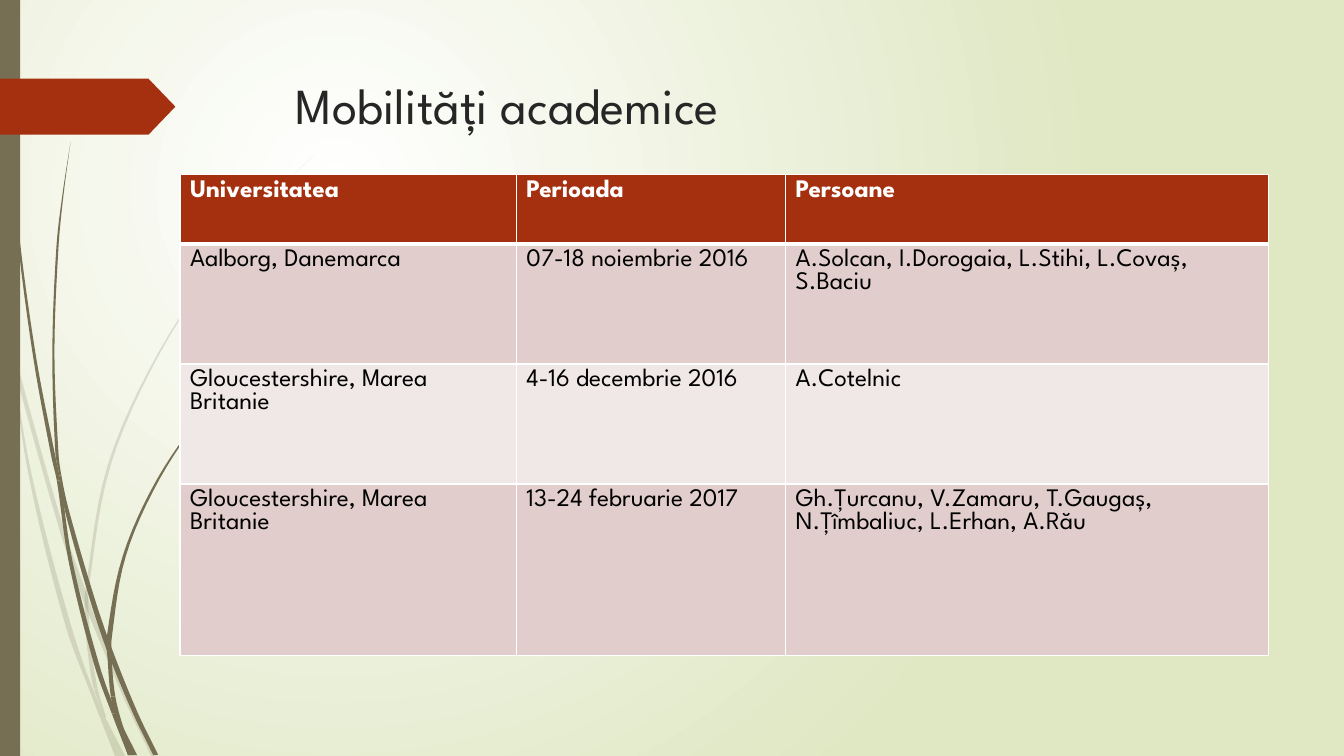
from lxml import etree
from pptx import Presentation
from pptx.dml.color import RGBColor
from pptx.enum.shapes import MSO_SHAPE
from pptx.enum.text import MSO_ANCHOR
from pptx.oxml.ns import qn
from pptx.util import Pt

RECTANGLE = MSO_SHAPE.RECTANGLE
ARROW = MSO_SHAPE.PENTAGON
TOP = MSO_ANCHOR.TOP

WHITE = RGBColor(0xFF, 0xFF, 0xFF)
BLACK = RGBColor(0x00, 0x00, 0x00)
CHARCOAL = RGBColor(0x26, 0x26, 0x26)
LIME = RGBColor(0xDF, 0xE7, 0xC3)
OLIVE = RGBColor(0x76, 0x6F, 0x54)
RUST = RGBColor(0xA5, 0x30, 0x10)
ROSE = RGBColor(0xE1, 0xCD, 0xCC)
BLUSH = RGBColor(0xF0, 0xE8, 0xE7)
FONT = "League Spartan"

TITLE = "Mobilități academice"
ROWS = [
    ("Universitatea", "Perioada", "Persoane"),
    ("Aalborg, Danemarca", "07-18 noiembrie 2016",
     "A.Solcan, I.Dorogaia, L.Stihi, L.Covaș, S.Baciu"),
    ("Gloucestershire, Marea Britanie", "4-16 decembrie 2016", "A.Cotelnic"),
    ("Gloucestershire, Marea Britanie", "13-24 februarie 2017",
     "Gh.Țurcanu, V.Zamaru, T.Gaugaș, N.Țîmbaliuc, L.Erhan, A.Rău"),
]
COLUMN_WIDTHS = [240.25, 192.25, 345]
ROW_HEIGHTS = [49.5, 85.75, 85.75, 122.5]

# Each blade has its joint heights, then stations of (y, left edge, right edge).
PALE_BLADES = [
    ((252, 421.9),
     [(203, 0, 0), (215.3, 0, 2.9), (252, 7.9, 11.2), (270.7, 12.2, 15.3),
      (374.4, 41.3, 44.6), (421.9, 56.9, 61.2), (439, 63.4, 67), (499, 88.6, 91.8),
      (540, 108, 111.6)]),
    ((499,),
     [(252, 7.9, 7.9), (338.4, 20.2, 22.5), (446.4, 46.6, 50.6),
      (499, 66.2, 69.1), (540, 82.1, 89.3)]),
    ((420.5, 439.2, 491.8),
     [(110.2, 224.6, 224.6), (141.8, 193, 193.6), (175.7, 164.2, 164.9),
      (250.6, 113.8, 115.2), (332, 77, 79.2), (420.5, 61.2, 63.4),
      (439.2, 60.5, 63.4), (465.1, 62.6, 65.5), (491.8, 67, 69.8),
      (512, 74.9, 75.6)]),
]
DARK_BLADES = [
    ((343.4, 509.8),
     [(0, 2.2, 2.9), (34.6, 2.9, 3.6), (79, 5, 5.8), (167.5, 12.2, 13.7),
      (255.6, 23.8, 25.9), (326.2, 36.7, 39.6), (343.4, 40.6, 43.2),
      (401, 49, 51.8), (473.8, 67, 70.6), (509.8, 79.9, 83.5), (539.3, 91.4, 97.9)]),
    ((339.8, 464.4),
     [(101.5, 50.4, 50.4), (139, 44.6, 45.4), (176.4, 40.3, 41.8),
      (251.3, 37.4, 38.9), (324, 39.6, 41.8), (339.8, 42.5, 43.9),
      (363.6, 46.1, 49), (425.5, 63.4, 67), (464.4, 76.3, 80.3),
      (509, 94.7, 98.3), (539.3, 109.4, 113)]),
    ((455, 472.3, 497.5),
     [(247.7, 187.2, 187.9), (268.6, 166.3, 167), (291.6, 146.9, 147.6),
      (342, 112.3, 114.1), (396.7, 87.8, 90), (455, 76.3, 79.9),
      (472.3, 77, 79.9), (497.5, 79.2, 82.4), (518.4, 84.2, 87.8),
      (539.3, 91.4, 95.8)]),
]
STEPS = 6


def slope(stations, index, side):
    before = stations[max(index - 1, 0)]
    after = stations[min(index + 1, len(stations) - 1)]
    return (after[side] - before[side]) / (after[0] - before[0])


def smooth_edge(stations, side):
    points = []
    for index in range(len(stations) - 1):
        start, end = stations[index], stations[index + 1]
        height = end[0] - start[0]
        first = slope(stations, index, side) * height
        last = slope(stations, index + 1, side) * height
        for step in range(STEPS):
            t = step / STEPS
            x = ((2 * t**3 - 3 * t**2 + 1) * start[side] + (t**3 - 2 * t**2 + t) * first
                 + (3 * t**2 - 2 * t**3) * end[side] + (t**3 - t**2) * last)
            points.append((Pt(x), Pt(start[0] + t * height)))
    points.append((Pt(stations[-1][side]), Pt(stations[-1][0])))
    return points


def paint(shape, color):
    shape.shadow.inherit = False
    shape.fill.solid()
    shape.fill.fore_color.rgb = color
    shape.line.fill.background()


def add_blade(page, joints, stations, alpha):
    left, right = smooth_edge(stations, 1), smooth_edge(stations, 2)
    cuts = [stations[0][0], *joints, stations[-1][0]]
    for top, bottom in zip(cuts, cuts[1:]):
        outline = [point for point in left + right[::-1]
                   if Pt(top) <= point[1] <= Pt(bottom)]
        builder = page.shapes.build_freeform(*outline[0])
        builder.add_line_segments(outline[1:], close=True)
        section = builder.convert_to_shape()
        paint(section, OLIVE)
        if alpha < 100:
            color = section.fill._xPr.find(".//" + qn("a:srgbClr"))
            etree.SubElement(color, qn("a:alpha"), val=str(alpha * 1000))


def add_background(page):
    fill = page.background.fill
    fill.gradient()
    for stop, color in zip(fill.gradient_stops, (WHITE, LIME)):
        stop.color.rgb = color
    gradient = page._element.find(".//" + qn("a:gradFill"))
    linear = gradient.find(qn("a:lin"))
    circle = etree.Element(qn("a:path"), path="circle")
    etree.SubElement(circle, qn("a:fillToRect"),
                     l="50000", t="50000", r="100000", b="100000")
    gradient.replace(linear, circle)


def add_border(cell, side, width):
    line = etree.SubElement(cell._tc.get_or_add_tcPr(), qn("a:" + side), w=str(Pt(width)))
    fill = etree.SubElement(line, qn("a:solidFill"))
    etree.SubElement(fill, qn("a:srgbClr"), val=str(WHITE))


def set_font(para, size, color, bold=False):
    para.font.name = FONT
    para.font.size = Pt(size)
    para.font.color.rgb = color
    para.font.bold = bold


def add_mobility_table(page):
    frame = page.shapes.add_table(len(ROWS), len(COLUMN_WIDTHS), Pt(128.6), Pt(124.75),
                                  Pt(sum(COLUMN_WIDTHS)), Pt(sum(ROW_HEIGHTS)))
    table = frame.table
    for column, width in zip(table.columns, COLUMN_WIDTHS):
        column.width = Pt(width)
    for number, texts in enumerate(ROWS):
        table.rows[number].height = Pt(ROW_HEIGHTS[number])
        header = number == 0
        color = RUST if header else ROSE if number % 2 else BLUSH
        widths = {"lnL": 1, "lnR": 1, "lnT": 3 if number == 1 else 1,
                  "lnB": 3 if header else 1}
        for position, text in enumerate(texts):
            cell = table.cell(number, position)
            for side, width in widths.items():
                add_border(cell, side, width)
            cell.fill.solid()
            cell.fill.fore_color.rgb = color
            cell.text = text
            set_font(cell.text_frame.paragraphs[0], 18, WHITE if header else BLACK, header)


def main():
    deck = Presentation()
    deck.slide_width, deck.slide_height = Pt(960), Pt(540)
    page = deck.slides.add_slide(deck.slide_layouts[6])
    add_background(page)
    for blades, alpha in ((PALE_BLADES, 20), (DARK_BLADES, 100)):
        for joints, stations in blades:
            add_blade(page, joints, stations, alpha)

    paint(page.shapes.add_shape(RECTANGLE, 0, 0, Pt(14.4), Pt(540)), OLIVE)
    arrow = page.shapes.add_shape(ARROW, 0, Pt(56.2), Pt(125.3), Pt(40))
    arrow.adjustments[0] = 0.48
    paint(arrow, RUST)

    box = page.shapes.add_textbox(Pt(204.1), Pt(49.2), Pt(702), Pt(100.8))
    box.text_frame.word_wrap = True
    box.text_frame.vertical_anchor = TOP
    para = box.text_frame.paragraphs[0]
    para.text = TITLE
    set_font(para, 36, CHARCOAL)

    add_mobility_table(page)
    deck.save("out.pptx")


if __name__ == "__main__":
    main()
